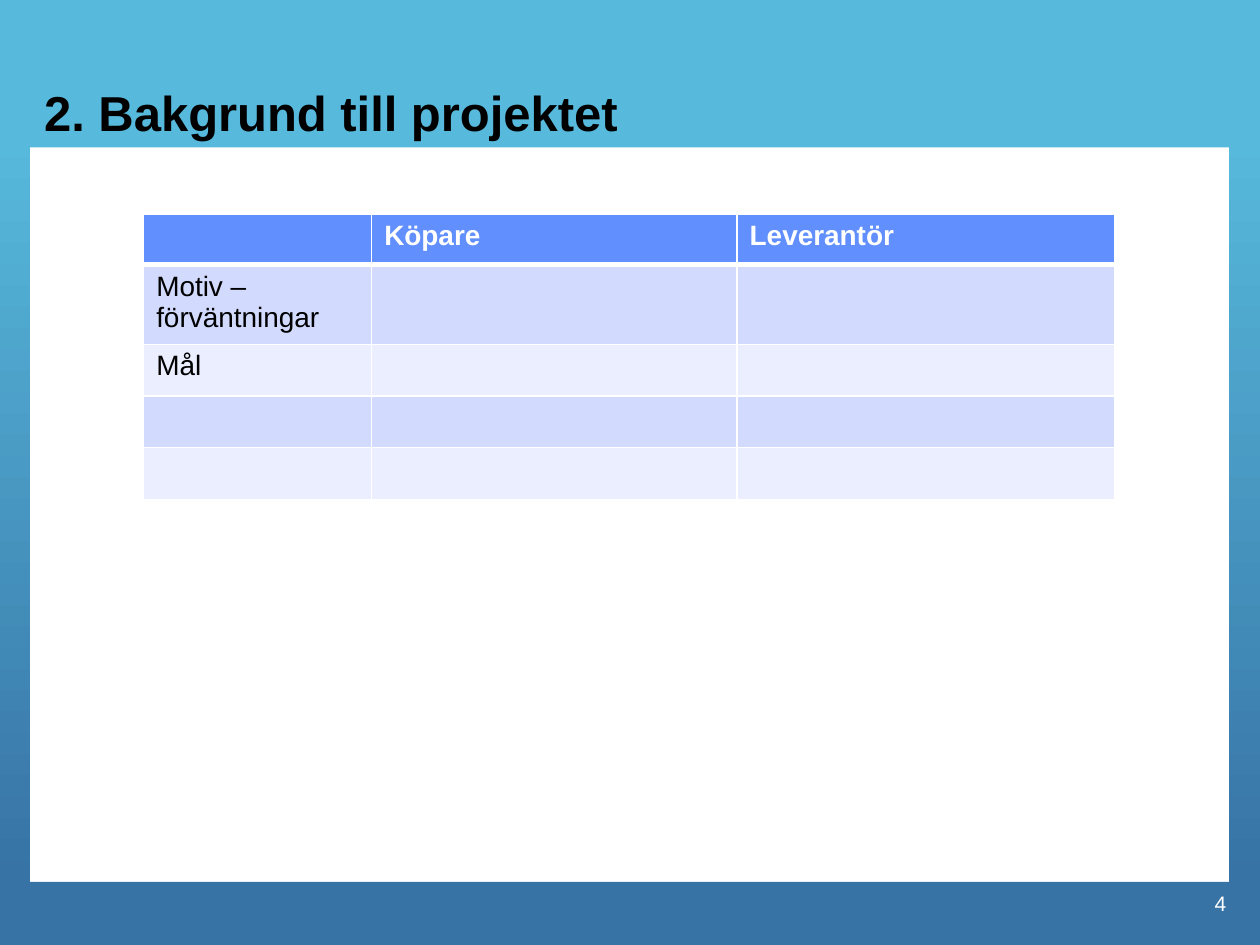
from lxml import etree
from pptx import Presentation
from pptx.dml.color import RGBColor
from pptx.enum.shapes import MSO_SHAPE as Shape
from pptx.enum.text import MSO_ANCHOR as Anchor, PP_ALIGN as Align
from pptx.oxml.ns import qn
from pptx.util import Inches, Pt

COLORS = {
    "sky": "57B9DC", "deep": "3773A5", "white": "FFFFFF", "black": "000000",
    "header": "618FFD", "odd": "D2DBFE", "even": "EAEEFF",
}

# Content
TITLE = "2. Bakgrund till projektet"
PAGE_NUMBER = "4"
ROWS = [
    ("", "Köpare", "Leverantör"),
    ("Motiv – förväntningar", "", ""),
    ("Mål", "", ""),
    ("", "", ""),
    ("", "", ""),
]
COLUMN_WIDTHS = (1.81, 2.9, 3)
ROW_HEIGHTS = (0.4, 0.6, 0.41, 0.41, 0.41)
# Frame bars: left, top, width, height, fill (two colours make a gradient)
FRAME = [
    (-0.01, 1.08, 0.25, 5.92, ("sky", "deep")),
    (9.75, 1.08, 0.25, 5.92, ("sky", "deep")),
    (0, 7, 10, 0.5, ("deep",)),
    (0, 0, 10, 1.17, ("sky",)),
]
TITLE_FORMAT = {"size": Pt(28), "bold": True}
HEADER_FORMAT = {"size": Pt(16), "bold": True}
BODY_FORMAT = {"size": Pt(16), "bold": False}
NUMBER_FORMAT = {"size": Pt(12)}


def rgb(name):
    return RGBColor.from_string(COLORS[name])


def write(text_frame, text, values, color, align):
    paragraph = text_frame.paragraphs[0]
    paragraph.alignment = align
    run = paragraph.add_run()
    run.text = text
    run.font.name = "Arial"
    run.font.color.rgb = rgb(color)
    for name, value in values.items():
        setattr(run.font, name, value)


def add_bar(slide, left, top, width, height, fill_names):
    bar = slide.shapes.add_shape(
        Shape.RECTANGLE, *map(Inches, (left, top, width, height)))
    bar.shadow.inherit = False
    bar.line.fill.background()
    if len(fill_names) == 1:
        bar.fill.solid()
        bar.fill.fore_color.rgb = rgb(fill_names[0])
        return
    bar.fill.gradient()
    bar.fill.gradient_angle = 270
    for stop, name, position in zip(bar.fill.gradient_stops, fill_names, (0, 1)):
        stop.color.rgb = rgb(name)
        stop.position = position


def set_borders(cell, widths):
    properties = cell._tc.get_or_add_tcPr()
    for side, width in widths.items():
        line = etree.SubElement(properties, qn(f"a:ln{side}"), w=str(Pt(width)))
        fill = etree.SubElement(line, qn("a:solidFill"))
        etree.SubElement(fill, qn("a:srgbClr"), val=COLORS["white"])


def main():
    presentation = Presentation()
    presentation.slide_width = Inches(10)
    presentation.slide_height = Inches(7.5)
    slide = presentation.slides.add_slide(presentation.slide_layouts[5])

    # Frame
    for bar in FRAME:
        add_bar(slide, *bar)

    # Title, brought in front of the frame
    title = slide.shapes.title
    slide.shapes._spTree.append(title._element)
    title.left, title.top, title.width, title.height = map(
        Inches, (0.25, 0.25, 9.5, 0.92))
    title.text_frame.vertical_anchor = Anchor.BOTTOM
    write(title.text_frame, TITLE, TITLE_FORMAT, "black", Align.LEFT)

    # Page number
    number = slide.shapes.add_textbox(*map(Inches, (7.75, 6.92, 2.08, 0.5)))
    number.text_frame.word_wrap = True
    number.text_frame.vertical_anchor = Anchor.MIDDLE
    write(number.text_frame, PAGE_NUMBER, NUMBER_FORMAT, "white", Align.RIGHT)

    # Table
    table = slide.shapes.add_table(
        len(ROWS), len(COLUMN_WIDTHS), Inches(1.14), Inches(1.7),
        Inches(sum(COLUMN_WIDTHS)), Inches(sum(ROW_HEIGHTS))).table
    for column, width in zip(table.columns, COLUMN_WIDTHS):
        column.width = Inches(width)
    for index, (row, height, texts) in enumerate(zip(table.rows, ROW_HEIGHTS, ROWS)):
        row.height = Inches(height)
        is_header = index == 0
        fill_name = "header" if is_header else ("even", "odd")[index % 2]
        for cell, text in zip(row.cells, texts):
            set_borders(cell, {"L": 1, "R": 1, "T": 3 if index == 1 else 1,
                               "B": 3 if is_header else 1})
            cell.fill.solid()
            cell.fill.fore_color.rgb = rgb(fill_name)
            if text:
                write(cell.text_frame, text,
                      HEADER_FORMAT if is_header else BODY_FORMAT,
                      "white" if is_header else "black", Align.LEFT)

    presentation.save("out.pptx")


if __name__ == "__main__":
    main()
